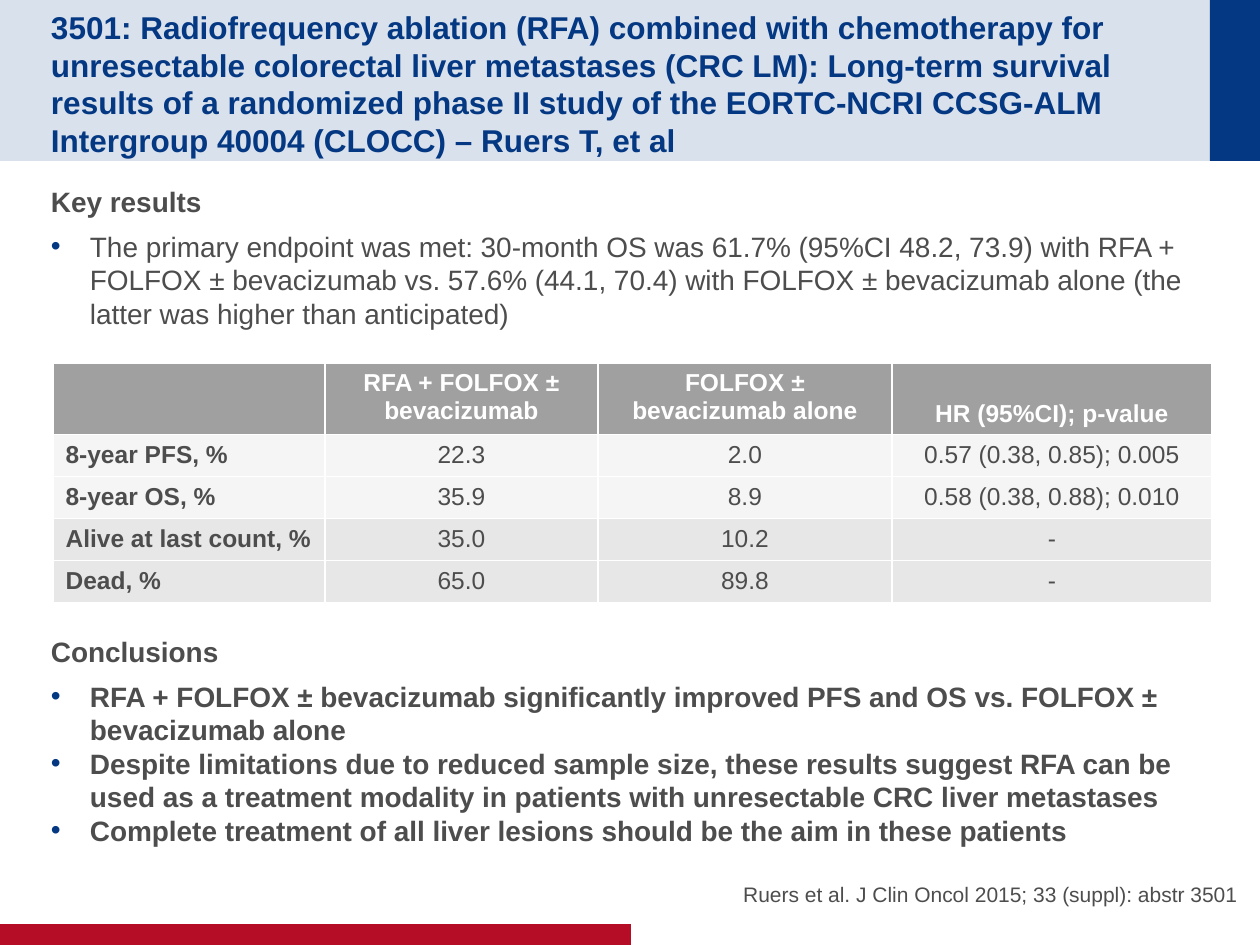
from dataclasses import dataclass

from lxml.etree import SubElement
from pptx import Presentation
from pptx.dml.color import RGBColor
from pptx.enum.shapes import MSO_SHAPE
from pptx.enum.text import MSO_ANCHOR, MSO_AUTO_SIZE, PP_ALIGN
from pptx.oxml.ns import qn
from pptx.util import Pt

EMU_PER_PX = 914400 / 126
FONT = "Arial"
NAVY = RGBColor(0x04, 0x38, 0x82)
RED = RGBColor(0xB6, 0x0D, 0x27)
GRAY = RGBColor(0xA0, 0xA0, 0xA0)
TEXT = RGBColor(0x4D, 0x4D, 0x4D)
WHITE = RGBColor(0xFF, 0xFF, 0xFF)


def px(value: int) -> int:
    return round(value * EMU_PER_PX)


@dataclass
class Box:
    left: int
    top: int
    width: int
    height: int

    def emu(self) -> tuple:
        return px(self.left), px(self.top), px(self.width), px(self.height)


@dataclass
class Bar:
    box: Box
    color: RGBColor
    opacity: int = 100


@dataclass
class Section:
    box: Box
    heading: str
    bullets: list
    bold: bool


@dataclass
class Row:
    values: list
    opacity: int


BARS = [
    Bar(Box(0, 0, 1260, 161), NAVY, 15),
    Bar(Box(1210, 0, 50, 161), NAVY),
    Bar(Box(0, 924, 631, 21), RED),
]
TITLE = ("3501: Radiofrequency ablation (RFA) combined with chemotherapy for "
         "unresectable colorectal liver metastases (CRC LM): Long-term survival results "
         "of a randomized phase II study of the EORTC-NCRI CCSG-ALM Intergroup 40004 "
         "(CLOCC) – Ruers T, et al")
SECTIONS = [
    Section(Box(51, 179, 1158, 160), "Key results", [
        "The primary endpoint was met: 30-month OS was 61.7% (95%CI 48.2, 73.9) with "
        "RFA + FOLFOX ± bevacizumab vs. 57.6% (44.1, 70.4) with FOLFOX ± bevacizumab "
        "alone (the latter was higher than anticipated)",
    ], False),
    Section(Box(51, 629, 1158, 226), "Conclusions", [
        "RFA + FOLFOX ± bevacizumab significantly improved PFS and OS vs. "
        "FOLFOX ± bevacizumab alone",
        "Despite limitations due to reduced sample size, these results suggest RFA can "
        "be used as a treatment modality in patients with unresectable CRC liver metastases",
        "Complete treatment of all liver lesions should be the aim in these patients",
    ], True),
]
COLUMN_WIDTHS = [272, 273, 294, 320]
HEADER_HEIGHT, ROW_HEIGHT = 71, 42
ROWS = [
    Row(["", "RFA + FOLFOX ± bevacizumab", "FOLFOX ± bevacizumab alone",
         "HR (95%CI); p-value"], 100),
    Row(["8-year PFS, %", "22.3", "2.0", "0.57 (0.38, 0.85); 0.005"], 10),
    Row(["8-year OS, %", "35.9", "8.9", "0.58 (0.38, 0.88); 0.010"], 10),
    Row(["Alive at last count, %", "35.0", "10.2", "-"], 25),
    Row(["Dead, %", "65.0", "89.8", "-"], 25),
]


def set_fill(fill, element, color: RGBColor, opacity: int) -> None:
    fill.solid()
    fill.fore_color.rgb = color
    if opacity < 100:
        color_element = element.find(".//" + qn("a:solidFill")).find(qn("a:srgbClr"))
        SubElement(color_element, qn("a:alpha"), val=str(opacity * 1000))


def style(paragraph, size: int, color: RGBColor, bold: bool = False) -> None:
    for run in paragraph.runs:
        run.font.name = FONT
        run.font.size = Pt(size)
        run.font.bold = bold
        run.font.color.rgb = color


def set_margins(frame, left: int, top: int, right: int, bottom: int) -> None:
    frame.margin_left, frame.margin_top = px(left), px(top)
    frame.margin_right, frame.margin_bottom = px(right), px(bottom)


def add_bullet(paragraph) -> None:
    properties = paragraph._p.get_or_add_pPr()
    properties.set("marL", str(px(39)))
    properties.set("indent", str(px(-39)))
    bullet_color = SubElement(properties, qn("a:buClr"))
    SubElement(bullet_color, qn("a:srgbClr"), val=str(NAVY))
    SubElement(properties, qn("a:buFont"), typeface=FONT)
    SubElement(properties, qn("a:buChar"), char="•")


def add_bar(slide, bar: Bar) -> None:
    shape = slide.shapes.add_shape(MSO_SHAPE.RECTANGLE, *bar.box.emu())
    shape.shadow.inherit = False
    shape.line.fill.background()
    set_fill(shape.fill, shape._element, bar.color, bar.opacity)


def add_title(slide) -> None:
    title = slide.shapes.title
    slide.shapes._spTree.append(title._element)  # in front of the banner
    title.left, title.top, title.width, title.height = Box(51, 25, 1135, 111).emu()
    frame = title.text_frame
    frame.text = TITLE
    frame.word_wrap = True
    frame.auto_size = MSO_AUTO_SIZE.NONE
    frame.vertical_anchor = MSO_ANCHOR.MIDDLE
    set_margins(frame, 0, 6, 0, 0)
    frame.paragraphs[0].alignment = PP_ALIGN.LEFT
    style(frame.paragraphs[0], 18, NAVY, True)


def add_section(slide, section: Section) -> None:
    frame = slide.shapes.add_textbox(*section.box.emu()).text_frame
    frame.word_wrap = True
    set_margins(frame, 0, 6, 13, 6)
    heading = frame.paragraphs[0]
    heading.text = section.heading
    heading.space_after = Pt(6)
    style(heading, 16, TEXT, True)
    for text in section.bullets:
        paragraph = frame.add_paragraph()
        paragraph.text = text
        add_bullet(paragraph)
        style(paragraph, 16, TEXT, section.bold)


def add_borders(cell) -> None:
    properties = cell._tc.get_or_add_tcPr()
    for index, side in enumerate(("a:lnT", "a:lnB")):
        line = properties.makeelement(qn(side), {"w": str(Pt(1))})
        fill = SubElement(line, qn("a:solidFill"))
        SubElement(fill, qn("a:srgbClr"), val=str(WHITE))
        properties.insert(index, line)


def add_results_table(slide) -> None:
    height = HEADER_HEIGHT + ROW_HEIGHT * (len(ROWS) - 1)
    box = Box(53, 363, sum(COLUMN_WIDTHS), height)
    table = slide.shapes.add_table(len(ROWS), len(COLUMN_WIDTHS), *box.emu()).table
    for column, width in zip(table.columns, COLUMN_WIDTHS):
        column.width = px(width)
    for row_index, row in enumerate(ROWS):
        is_header = row_index == 0
        table.rows[row_index].height = px(HEADER_HEIGHT if is_header else ROW_HEIGHT)
        for column_index, value in enumerate(row.values):
            cell = table.cell(row_index, column_index)
            cell.text_frame.text = value
            set_fill(cell.fill, cell._tc, GRAY, row.opacity)
            add_borders(cell)
            paragraph = cell.text_frame.paragraphs[0]
            paragraph.alignment = PP_ALIGN.CENTER if column_index else PP_ALIGN.LEFT
            style(paragraph, 14, WHITE if is_header else TEXT,
                  is_header or column_index == 0)
    table.cell(0, len(COLUMN_WIDTHS) - 1).vertical_anchor = MSO_ANCHOR.BOTTOM


def add_citation(slide) -> None:
    frame = slide.shapes.add_textbox(*Box(640, 840, 598, 67).emu()).text_frame
    frame.word_wrap = True
    frame.vertical_anchor = MSO_ANCHOR.BOTTOM
    set_margins(frame, 0, 0, 0, 0)
    frame.text = "Ruers et al. J Clin Oncol 2015; 33 (suppl): abstr 3501"
    frame.paragraphs[0].alignment = PP_ALIGN.RIGHT
    style(frame.paragraphs[0], 12, TEXT)


def main() -> None:
    presentation = Presentation()
    presentation.slide_width, presentation.slide_height = px(1260), px(945)
    slide = presentation.slides.add_slide(presentation.slide_layouts[5])
    for bar in BARS:
        add_bar(slide, bar)
    add_title(slide)
    add_citation(slide)
    for section in SECTIONS:
        add_section(slide, section)
    add_results_table(slide)
    presentation.save("out.pptx")


if __name__ == "__main__":
    main()
